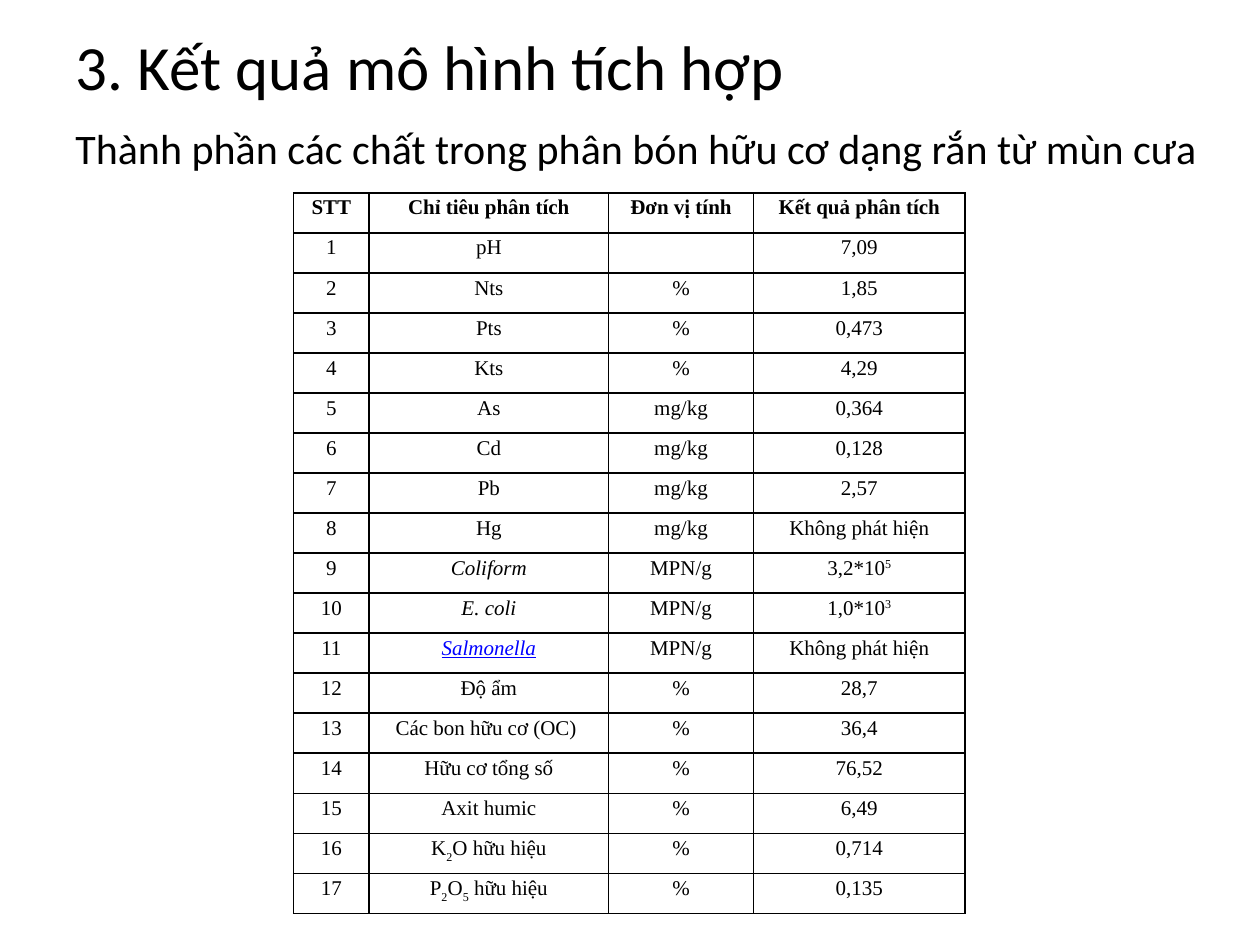
import pptx
import pptx.util
import pptx.dml.color
import pptx.enum.text
import pptx.oxml
import pptx.oxml.ns

Inches, Pt = pptx.util.Inches, pptx.util.Pt
ALIGN = pptx.enum.text.PP_ALIGN
ANCHOR = pptx.enum.text.MSO_ANCHOR

HEAD = ["STT", "Chỉ tiêu phân tích", "Đơn vị tính", "Kết quả phân tích"]
NONE = "Không phát hiện"
# A part that starts with ^ is raised, one that starts with _ is lowered
ROWS = [
    ("pH", "", "7,09"),
    ("Nts", "%", "1,85"),
    ("Pts", "%", "0,473"),
    ("Kts", "%", "4,29"),
    ("As", "mg/kg", "0,364"),
    ("Cd", "mg/kg", "0,128"),
    ("Pb", "mg/kg", "2,57"),
    ("Hg", "mg/kg", NONE),
    ("Coliform", "MPN/g", ["3,2*10", "^5"]),
    ("E. coli", "MPN/g", ["1,0*10", "^3"]),
    ("Salmonella", "MPN/g", NONE),
    ("Độ ẩm", "%", "28,7"),
    ("Các bon hữu cơ (OC) ", "%", "36,4"),
    ("Hữu cơ tổng số", "%", "76,52"),
    ("Axit humic", "%", "6,49"),
    (["K", "_2", "O hữu hiệu"], "%", "0,714"),
    (["P", "_2", "O", "_5", " hữu hiệu"], "%", "0,135"),
]
LATIN = {"Coliform", "E. coli", "Salmonella"}
LINKED = "Salmonella"


def color(code):
    return pptx.dml.color.RGBColor.from_string(code)


class Deck:
    sans, serif = "Calibri", "Times New Roman"
    ink, link = "000000", "0000FF"
    shift = {"^": "30000", "_": "-25000"}

    def __init__(self):
        self.prs = pptx.Presentation()
        self.prs.slide_width = Inches(10)
        self.prs.slide_height = Inches(7.5)
        self.slide = self.prs.slides.add_slide(self.prs.slide_layouts[5])

    def run(self, para, text, size, face, tone=ink):
        run = para.add_run()
        if text[0] in self.shift:
            run._r.get_or_add_rPr().set("baseline", self.shift[text[0]])
            text = text[1:]
        run.text = text
        run.font.size = Pt(size)
        run.font.name = face
        run.font.color.rgb = color(tone)
        return run

    def title(self, text, x, y, w, h):
        box = self.slide.shapes.title
        box.left, box.top, box.width, box.height = map(Inches, (x, y, w, h))
        box.text_frame.vertical_anchor = ANCHOR.MIDDLE
        para = box.text_frame.paragraphs[0]
        para.alignment = ALIGN.LEFT
        self.run(para, text, 36, self.sans)

    def text(self, text, x, y, w, h):
        box = self.slide.shapes.add_textbox(*map(Inches, (x, y, w, h)))
        box.text_frame.word_wrap = True
        self.run(box.text_frame.paragraphs[0], text, 24, self.sans)

    def border(self, cell):
        props = cell._tc.get_or_add_tcPr()
        for i, side in enumerate("LRTB"):
            props.insert(i, pptx.oxml.parse_xml(
                f'<a:ln{side} {pptx.oxml.ns.nsdecls("a")} w="12700"><a:solidFill>'
                f'<a:srgbClr val="{self.ink}"/></a:solidFill></a:ln{side}>'))

    def cell(self, cell, parts, bold):
        cell.margin_left = cell.margin_right = Inches(0.07)
        cell.margin_top = cell.margin_bottom = 0
        cell.fill.background()
        self.border(cell)
        para = cell.text_frame.paragraphs[0]
        para.alignment = ALIGN.CENTER
        para.line_spacing = 1.15
        para.space_after = Pt(6)
        if isinstance(parts, str):
            parts = [parts] if parts else []
        for part in parts:
            tone = self.link if part == LINKED else self.ink
            font = self.run(para, part, 12, self.serif, tone).font
            font.bold = bold
            font.italic = part in LATIN
            font.underline = part == LINKED

    def table(self, rows, x, y, widths, high):
        frame = self.slide.shapes.add_table(
            len(rows), len(widths), Inches(x), Inches(y),
            Inches(sum(widths)), Inches(high))
        grid = frame.table
        grid.horz_banding = False
        for col, wide in zip(grid.columns, widths):
            col.width = Inches(wide)
        for r, row in enumerate(rows):
            grid.rows[r].height = Inches(high / len(rows))
            for c, parts in enumerate(row):
                self.cell(grid.cell(r, c), parts, r == 0)


def main():
    deck = Deck()
    # Heading and subject
    deck.title("3. Kết quả mô hình tích hợp", 0.5, 0.17, 9, 0.7)
    deck.text("Thành phần các chất trong phân bón hữu cơ dạng rắn từ mùn cưa",
              0.5, 0.92, 9.17, 5.78)
    # Numbered results
    rows = [HEAD] + [(str(n), *row) for n, row in enumerate(ROWS, 1)]
    deck.table(rows, 2.33, 1.53, [0.6, 1.9, 1.15, 1.68], 5.72)
    deck.prs.save("out.pptx")


if __name__ == "__main__":
    main()
